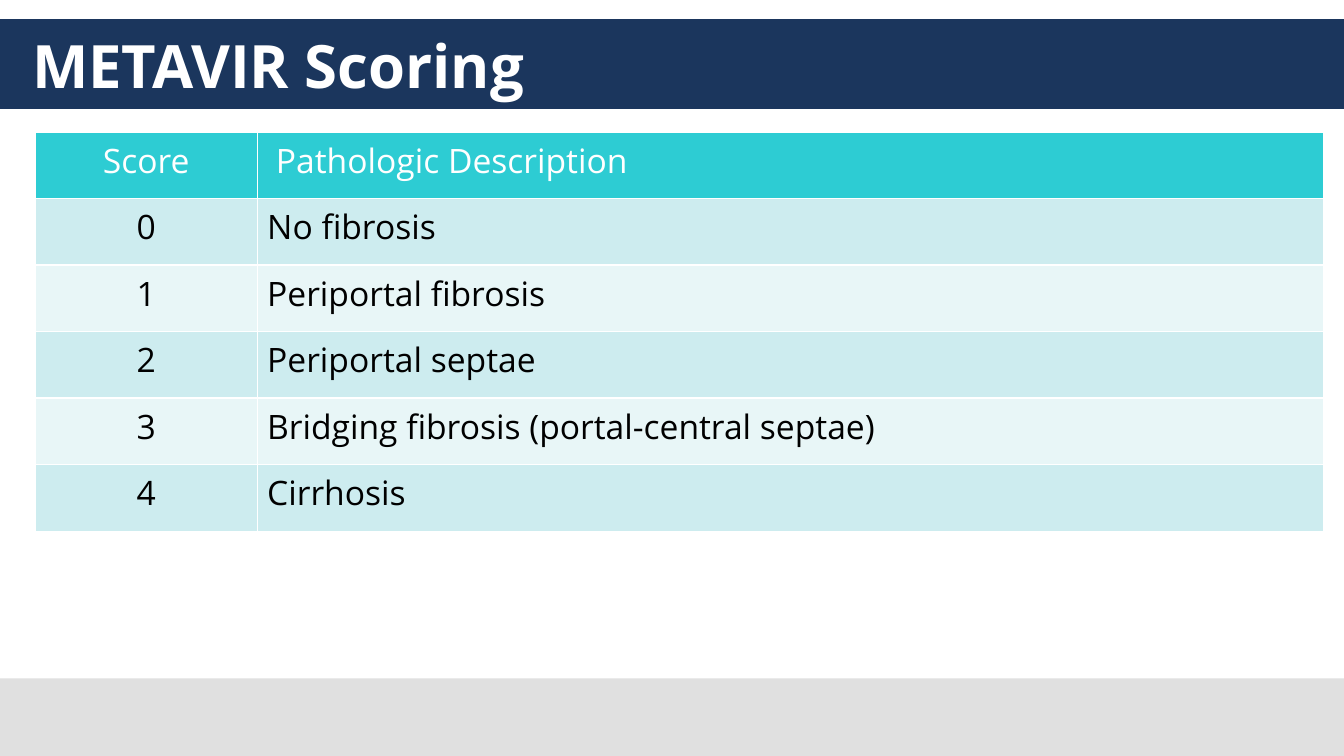
"""Build the METAVIR scoring slide."""
from dataclasses import dataclass

from pptx import Presentation
from pptx.dml.color import RGBColor
from pptx.enum.shapes import MSO_SHAPE
from pptx.enum.text import MSO_ANCHOR, PP_ALIGN
from pptx.slide import Slide
from pptx.text.text import TextFrame
from pptx.util import Inches, Pt

FONT = "Open Sans"
WHITE = "FFFFFF"
BLACK = "000000"
TEAL = "2DCCD3"
BANDS = ("CDECEF", "E8F6F7")
WIDE = 13.33
ROW_H = 0.66
COLS = (2.2, 10.58)


@dataclass(frozen=True)
class Band:
    top: float
    height: float
    fill: str


@dataclass(frozen=True)
class Score:
    grade: str
    finding: str


BARS = (Band(0.19, 0.89, "1B365D"), Band(6.73, 0.77, "E0E0E0"))
SCORES = (
    Score("Score", " Pathologic Description"),
    Score("0", "No fibrosis"),
    Score("1", "Periportal fibrosis"),
    Score("2", "Periportal septae"),
    Score("3", "Bridging fibrosis (portal-central septae)"),
    Score("4", "Cirrhosis"),
)


def color(code: str) -> RGBColor:
    return RGBColor.from_string(code)


def put_text(frame: TextFrame, text: str, size: float, ink: str, bold: bool = False) -> None:
    frame.text = text
    font = frame.paragraphs[0].runs[0].font
    font.name = FONT
    font.size = Pt(size)
    font.bold = bold
    font.color.rgb = color(ink)


def draw_bar(slide: Slide, bar: Band) -> None:
    shape = slide.shapes.add_shape(
        MSO_SHAPE.RECTANGLE, 0, Inches(bar.top), Inches(WIDE), Inches(bar.height)
    )
    shape.shadow.inherit = False
    shape.fill.solid()
    shape.fill.fore_color.rgb = color(bar.fill)
    shape.line.fill.background()


def draw_title(slide: Slide) -> None:
    box = slide.shapes.add_textbox(Inches(0.22), Inches(0.19), Inches(12.89), Inches(0.9))
    frame = box.text_frame
    frame.word_wrap = True
    frame.vertical_anchor = MSO_ANCHOR.MIDDLE
    put_text(frame, "METAVIR Scoring", 42.7, WHITE, True)


def draw_table(slide: Slide) -> None:
    table = slide.shapes.add_table(
        len(SCORES), len(COLS), Inches(0.35), Inches(1.31),
        Inches(sum(COLS)), Inches(ROW_H * len(SCORES)),
    ).table
    for col, width in zip(table.columns, COLS):
        col.width = Inches(width)
    for row, score in enumerate(SCORES):
        table.rows[row].height = Inches(ROW_H)
        fill = BANDS[(row - 1) % 2] if row else TEAL
        for col, text in enumerate((score.grade, score.finding)):
            cell = table.cell(row, col)
            cell.fill.solid()
            cell.fill.fore_color.rgb = color(fill)
            put_text(cell.text_frame, text, 24, BLACK if row else WHITE)
        table.cell(row, 0).text_frame.paragraphs[0].alignment = PP_ALIGN.CENTER


def main() -> None:
    deck = Presentation()
    deck.slide_width = Inches(WIDE)
    deck.slide_height = Inches(7.5)
    slide = deck.slides.add_slide(deck.slide_layouts[6])
    for bar in BARS:
        draw_bar(slide, bar)
    draw_title(slide)
    draw_table(slide)
    deck.save("out.pptx")


if __name__ == "__main__":
    main()
